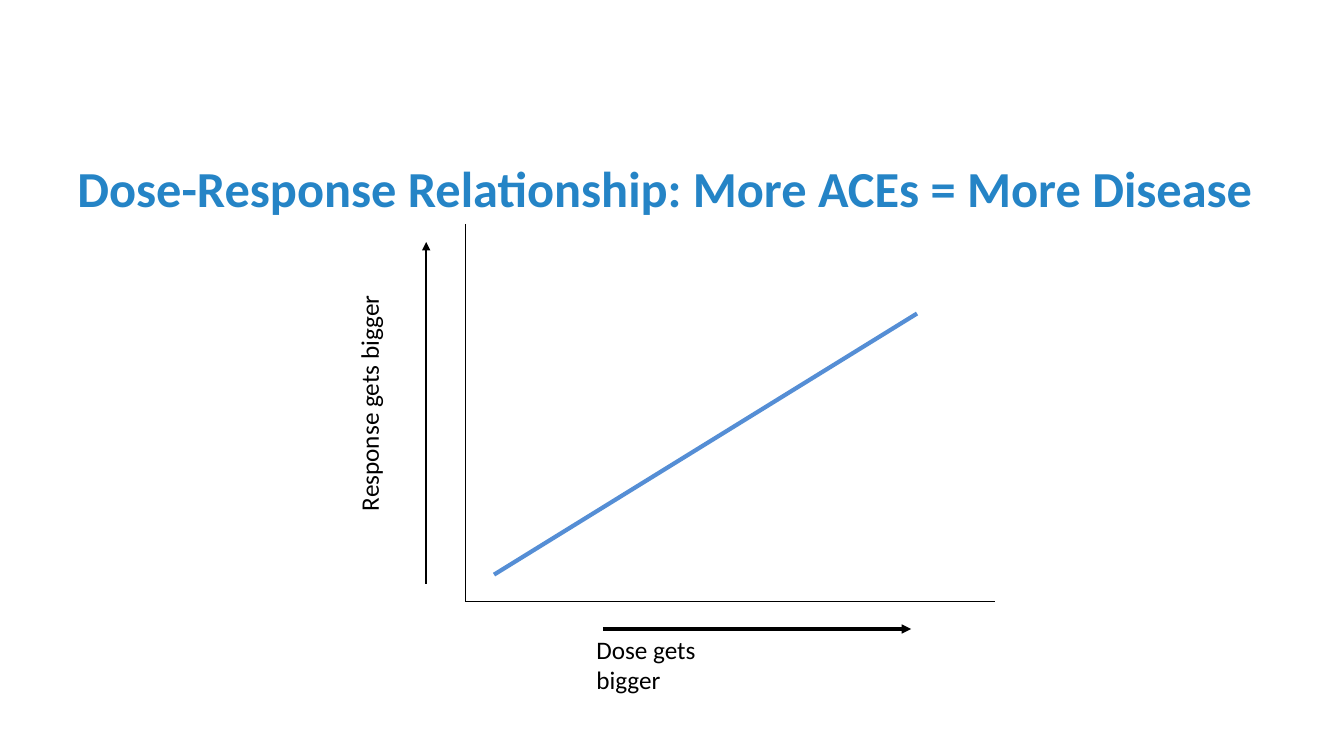
from pptx import Presentation
from pptx.dml.color import RGBColor
from pptx.enum import shapes, text
from pptx.oxml import ns
from pptx.util import Cm, Pt
from lxml import etree

BLACK = RGBColor(0x00, 0x00, 0x00)
TITLE = RGBColor(0x25, 0x84, 0xC6)
TREND = RGBColor(0x55, 0x8E, 0xD5)


def add_line(slide, start, end, width, color=BLACK, arrow=False):
    """Draw a straight line between two points given in centimetres."""
    ends = [Cm(v) for v in (*start, *end)]
    line = slide.shapes.add_connector(shapes.MSO_CONNECTOR.STRAIGHT, *ends)
    line.line.color.rgb = color
    line.line.width = Pt(width)
    if arrow:
        tail = etree.SubElement(line.line._get_or_add_ln(), ns.qn("a:tailEnd"))
        tail.set("type", "triangle")
    etree.SubElement(line._element.spPr, ns.qn("a:effectLst"))


def add_text(slide, words, area, size=18, color=BLACK, bold=False, turn=0):
    """Add a text box whose area is given in centimetres."""
    box = slide.shapes.add_textbox(*[Cm(v) for v in area])
    box.rotation = turn
    frame = box.text_frame
    frame.word_wrap = True
    frame.text = words
    font = frame.paragraphs[0].runs[0].font
    font.name = "Calibri"
    font.size = Pt(size)
    font.bold = bold
    font.color.rgb = color
    return box


def add_axes(slide, left, top, right, base):
    """Draw the upright and level axes from their shared corner."""
    add_line(slide, (left, top), (left, base), 0.75)
    add_line(slide, (left, base), (right, base), 0.75)


def main():
    """Build the slide and save it."""
    deck = Presentation()
    deck.slide_width, deck.slide_height = Cm(33.87), Cm(19.05)
    slide = deck.slides.add_slide(deck.slide_layouts[6])
    add_axes(slide, 11.73, 5.64, 25.07, 15.16)
    add_text(slide, "Dose gets bigger", (14.78, 15.85, 4.65, 1))
    add_line(slide, (15.19, 15.85), (22.96, 15.85), 2.25, arrow=True)
    add_text(slide, "Response gets bigger", (6.4, 9.5, 6.02, 1.24), turn=270)
    add_line(slide, (10.74, 14.71), (10.74, 6.1), 1.75, arrow=True)
    add_line(slide, (12.45, 14.48), (23.11, 7.9), 3, TREND)
    title = add_text(slide, "Dose-Response Relationship: More ACEs = More Disease",
                     (1.7, 4.11, 30.48, 1.24), 36, TITLE, True)
    title.text_frame.vertical_anchor = text.MSO_ANCHOR.MIDDLE
    deck.save("out.pptx")


if __name__ == "__main__":
    main()
